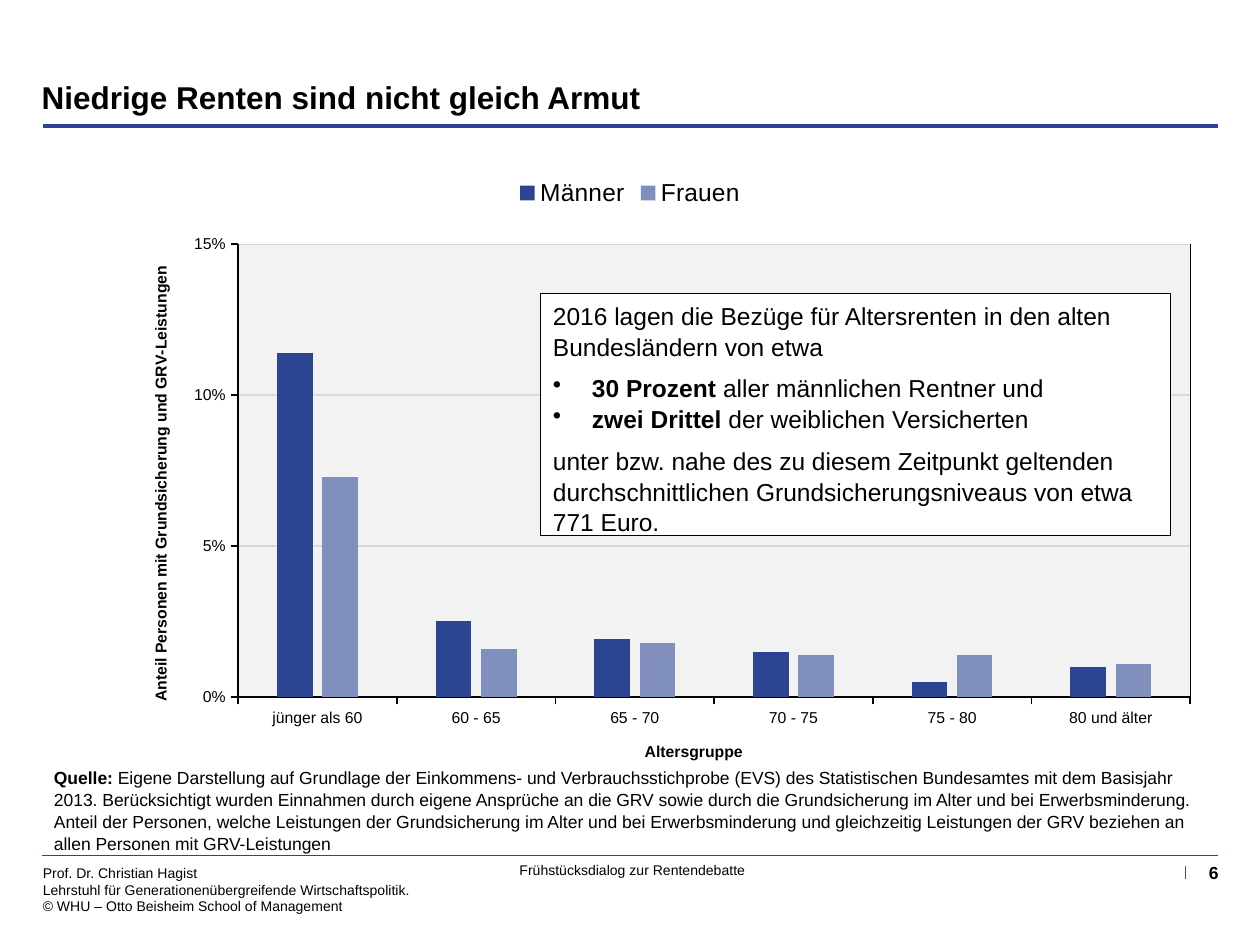
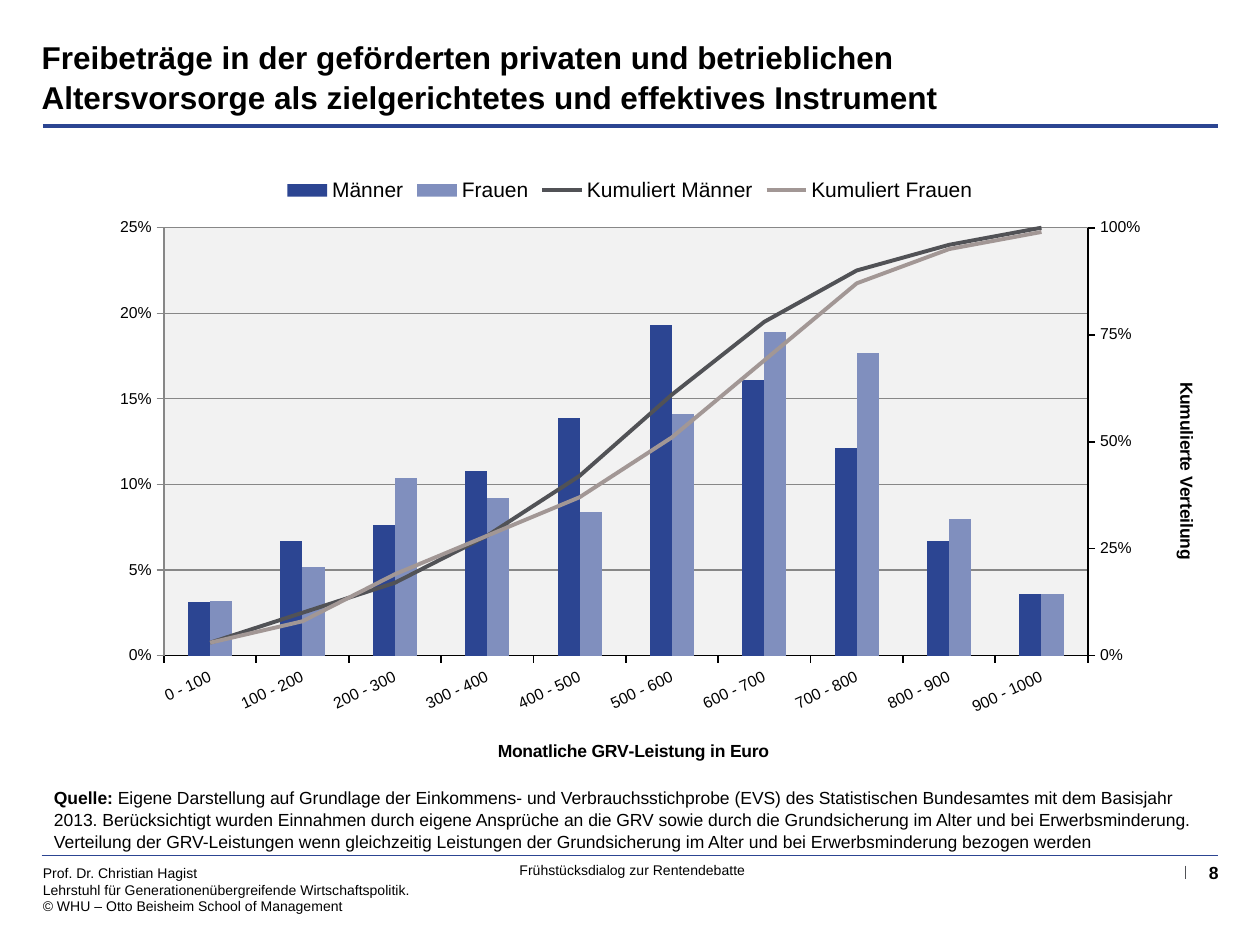
from copy import deepcopy

from pptx import Presentation
from pptx.chart.axis import ValueAxis
from pptx.chart.data import CategoryChartData
from pptx.dml.color import RGBColor
from pptx.enum.chart import (XL_CHART_TYPE, XL_LEGEND_POSITION, XL_MARKER_STYLE,
                             XL_TICK_MARK)
from pptx.enum.shapes import MSO_CONNECTOR, MSO_SHAPE
from pptx.enum.text import MSO_ANCHOR, PP_ALIGN
from pptx.oxml import parse_xml
from pptx.oxml.ns import nsdecls, qn
from pptx.util import Inches, Pt

COLUMN = XL_CHART_TYPE.COLUMN_CLUSTERED
TOP = XL_LEGEND_POSITION.TOP
NO_MARK = XL_MARKER_STYLE.NONE
NONE, OUT = XL_TICK_MARK.NONE, XL_TICK_MARK.OUTSIDE
RECT, STRAIGHT = MSO_SHAPE.RECTANGLE, MSO_CONNECTOR.STRAIGHT
HIGH, LOW = MSO_ANCHOR.TOP, MSO_ANCHOR.BOTTOM
LEFT, MID, RIGHT = PP_ALIGN.LEFT, PP_ALIGN.CENTER, PP_ALIGN.RIGHT

# Grid: 100 columns by 75 rows
COLS, ROWS = 100, 75
UNIT = Inches(0.1)
EDGE, SPAN = 3.3, 93.4
FONT = "Arial"
BLACK, WHITE, BLUE, PALE = "000000", "FFFFFF", "2C4592", "808FBE"
DARK, TAUPE, GRID, PLOT = "515256", "A29795", "D9D9D9", "F2F2F2"

SOURCE = ("Quelle:| Eigene Darstellung auf Grundlage der Einkommens- und "
          "Verbrauchsstichprobe (EVS) des Statistischen Bundesamtes mit dem "
          "Basisjahr 2013. Berücksichtigt wurden Einnahmen durch eigene "
          "Ansprüche an die GRV sowie durch die Grundsicherung im Alter und "
          "bei Erwerbsminderung. ")
AUTHOR = ["Prof. Dr. Christian Hagist",
          "Lehrstuhl für Generationenübergreifende Wirtschaftspolitik.",
          "© WHU – Otto Beisheim School of Management"]


def rgb(code):
    return RGBColor.from_string(code)


def units(*sizes):
    return [round(size * UNIT) for size in sizes]


def style(font, size, bold=False):
    font.name, font.size, font.bold = FONT, Pt(size), bold
    font.color.rgb = rgb(BLACK)


def ink(line, color, width):
    line.color.rgb, line.width = rgb(color), Pt(width)


def paint(fill, color):
    fill.solid()
    fill.fore_color.rgb = rgb(color)


def fill_xml(color):
    return parse_xml(f'<c:spPr {nsdecls("c", "a")}><a:solidFill>'
                     f'<a:srgbClr val="{color}"/></a:solidFill>'
                     '<a:ln><a:noFill/></a:ln></c:spPr>')


def layout(x, y, w=None, h=None):
    """Manual place in a chart, in shares of its size."""
    inner = '<c:layoutTarget val="inner"/>' if w else ""
    pairs = [("xMode", "edge"), ("yMode", "edge"), ("x", x), ("y", y)]
    if w:
        pairs += [("w", w), ("h", h)]
    tags = "".join(f'<c:{key} val="{val}"/>' for key, val in pairs)
    return parse_xml(f'<c:layout {nsdecls("c")}><c:manualLayout>{inner}{tags}'
                     '</c:manualLayout></c:layout>')


class Deck:
    def __init__(self):
        self.prs = Presentation()
        self.prs.slide_width, self.prs.slide_height = units(COLS, ROWS)
        self.slide = None

    # Page frame: rules, footer, number and title
    def page(self, title, number):
        self.slide = self.prs.slides.add_slide(self.prs.slide_layouts[6])
        self.text((2.6, 67.8, 36, 5.6), AUTHOR, 8, pad=0.8)
        self.text((36.4, 67.7, 27.6, 2.8), ["Frühstücksdialog zur Rentendebatte"],
                  8, pad=0.8, align=MID)
        self.line(EDGE, 67.9, EDGE + SPAN, 67.9, BLUE, 0.75)
        self.line(EDGE + 0.1, 10, EDGE + SPAN, 10, BLUE, 2.25)
        self.text((88.6, 67.6, 8.9, 2.9), [f"{number}|"], 10, pad=0.8, align=RIGHT)
        self.line(94.1, 68.7, 94.1, 69.8, DARK, 0.75)
        self.text((EDGE, 2.4, 75.9, 6.8), [f"{title}|"], 18, pad=0,
                  anchor=LOW, lead=1.05)

    def line(self, x1, y1, x2, y2, color, width):
        rule = self.slide.shapes.add_connector(STRAIGHT, *units(x1, y1, x2, y2))
        ink(rule.line, color, width)
        rule._element.spPr.append(parse_xml(f'<a:effectLst {nsdecls("a")}/>'))

    def text(self, place, lines, size, **look):
        box = self.slide.shapes.add_textbox(*units(*place))
        self.pour(box.text_frame, lines, size, **look)

    def panel(self, place, lines, size, **look):
        box = self.slide.shapes.add_shape(RECT, *units(*place))
        box.shadow.inherit = False
        paint(box.fill, WHITE)
        ink(box.line, BLACK, 0.75)
        self.pour(box.text_frame, lines, size, **look)

    def pour(self, frame, lines, size, pad=None, align=LEFT, anchor=HIGH,
             lead=None, gaps=(), dots=()):
        """Fill a frame; words before a bar are bold."""
        frame.word_wrap, frame.vertical_anchor = True, anchor
        if pad is not None:
            frame.margin_left = frame.margin_right = units(pad)[0]
            frame.margin_top = frame.margin_bottom = units(pad)[0]
        for num, words in enumerate(lines):
            para = frame.add_paragraph() if num else frame.paragraphs[0]
            para.alignment = align
            if lead:
                para.line_spacing = lead
            if num in gaps:
                para.space_after = Pt(6)
            if num in dots:
                self.dot(para)
            bold, bar, rest = words.partition("|")
            for part, strong in ((bold, bool(bar)), (rest, False)):
                if part:
                    run = para.add_run()
                    run.text = part
                    style(run.font, size, strong)

    def dot(self, para):
        props = para._p.get_or_add_pPr()
        indent = Inches(0.31)
        props.set("marL", str(indent))
        props.set("indent", str(-indent))
        props.append(parse_xml(f'<a:buChar {nsdecls("a")} char="•"/>'))

    def chart(self, place, cats, rows, plot, keys):
        """Column chart; rows hold name, values and colour."""
        data = CategoryChartData(number_format="0%")
        data.categories = cats
        for name, vals, _ in rows:
            data.add_series(name, vals)
        chart = self.slide.shapes.add_chart(COLUMN, *units(*place), data).chart
        style(chart.font, 9)
        chart.has_title = False
        chart.has_legend = True
        chart.legend.position = TOP
        chart.legend.include_in_layout = False
        style(chart.legend.font, keys)
        bars = chart.plots[0]
        bars.vary_by_categories, bars.gap_width = False, 219
        for row, (_, _, color) in zip(bars.series, rows):
            paint(row.format.fill, color)
        # Plot area
        space = chart._chartSpace
        space.chart.addnext(fill_xml(WHITE))
        area = space.chart.plotArea
        for old in area.findall(qn("c:layout")):
            area.remove(old)
        area.insert(0, layout(*plot))
        area.append(fill_xml(PLOT))
        return chart

    def axis(self, axis, title, size, spot, turn=0, top=None, step=None):
        axis.major_tick_mark, axis.minor_tick_mark = OUT, NONE
        ink(axis.format.line, BLACK, 1)
        style(axis.tick_labels.font, 9)
        if top:
            axis.minimum_scale, axis.maximum_scale = 0, top
            axis.major_unit = step
            axis.tick_labels.number_format = "0%"
            axis.tick_labels.number_format_is_linked = False
        frame = axis.axis_title.text_frame
        frame.text = title
        style(frame.paragraphs[0].runs[0].font, size, True)
        body = frame._txBody.bodyPr
        body.set("rot", str(turn * 60000))
        body.set("vert", "horz")
        head = axis._element.find(qn("c:title"))
        head.replace(head.find(qn("c:layout")), layout(*spot))

    def grid(self, axis):
        axis.has_major_gridlines = True
        ink(axis.major_gridlines.format.line, GRID, 0.75)

    def lines(self, chart, first, colors):
        """Turn series from first on into lines on a right axis."""
        area = chart._chartSpace.chart.plotArea
        bars = area.find(qn("c:barChart"))
        combo = parse_xml(
            f'<c:lineChart {nsdecls("c")}><c:grouping val="standard"/>'
            '<c:varyColors val="0"/><c:marker val="1"/>'
            '<c:axId val="501"/><c:axId val="502"/></c:lineChart>')
        mark = combo.find(qn("c:marker"))
        for row in bars.findall(qn("c:ser"))[first:]:
            for tag in ("c:invertIfNegative", "c:spPr"):
                for old in row.findall(qn(tag)):
                    row.remove(old)
            mark.addprevious(row)
        bars.addnext(combo)
        for row, color in zip(chart.plots[1].series, colors):
            ink(row.format.line, color, 2.25)
            row.marker.style, row.smooth = NO_MARK, False
        # Second pair of axes
        cat, val = area.find(qn("c:catAx")), area.find(qn("c:valAx"))
        twins = deepcopy(val), deepcopy(cat)
        for twin, own, other in zip(twins, ("502", "501"), ("501", "502")):
            twin.find(qn("c:axId")).set("val", own)
            twin.find(qn("c:crossAx")).set("val", other)
        right, base = twins
        val.addnext(right)
        right.addnext(base)
        right.find(qn("c:axPos")).set("val", "r")
        right.find(qn("c:crosses")).set("val", "max")
        base.find(qn("c:delete")).set("val", "1")
        side = ValueAxis(right)
        side.has_major_gridlines = False
        return side


def low_pensions(deck):
    deck.page("Niedrige Renten sind nicht gleich Armut", 6)
    chart = deck.chart(
        (EDGE, 13.1, SPAN, 52.9),
        ["jünger als 60", "60 - 65", "65 - 70", "70 - 75", "75 - 80", "80 und älter"],
        [("Männer", [0.114, 0.025, 0.019, 0.015, 0.005, 0.01], BLUE),
         ("Frauen", [0.073, 0.016, 0.018, 0.014, 0.014, 0.011], PALE)],
        (0.167, 0.119, 0.809, 0.679), 14)
    chart.plots[0].overlap = -27
    deck.axis(chart.category_axis, "Altersgruppe", 9, (0.51, 0.86))
    deck.axis(chart.value_axis,
              "Anteil Personen mit Grundsicherung und GRV-Leistungen",
              9, (0.09, 0.147), -90, 0.15, 0.05)
    deck.grid(chart.value_axis)
    deck.line(94.5, 19.4, 94.5, 55.3, BLACK, 0.75)
    deck.text((EDGE, 60.3, SPAN, 7.7), [
        SOURCE + "Anteil der Personen, welche Leistungen der Grundsicherung im "
        "Alter und bei Erwerbsminderung und gleichzeitig Leistungen der GRV "
        "beziehen an allen Personen mit GRV-Leistungen"], 10, lead=1.05)
    deck.panel((42.9, 23.3, 50, 19.2), [
        "2016 lagen die Bezüge für Altersrenten in den alten Bundesländern von etwa",
        "30 Prozent |aller männlichen Rentner und",
        "zwei Drittel |der weiblichen Versicherten",
        "unter bzw. nahe des zu diesem Zeitpunkt geltenden durchschnittlichen "
        "Grundsicherungsniveaus von etwa 771 Euro."],
        14, lead=1.05, gaps=(0, 2), dots=(1, 2))


def allowances(deck):
    deck.page("Freibeträge in der geförderten privaten und betrieblichen "
              "Altersvorsorge als zielgerichtetes und effektives Instrument", 8)
    chart = deck.chart(
        (EDGE, 13.1, SPAN, 48.8),
        [f"{low} - {low + 100}" for low in range(0, 1000, 100)],
        [("Männer", [0.031, 0.067, 0.076, 0.108, 0.139, 0.193, 0.161, 0.121,
                     0.067, 0.036], BLUE),
         ("Frauen", [0.032, 0.052, 0.104, 0.092, 0.084, 0.141, 0.189, 0.177,
                     0.08, 0.036], PALE),
         ("Kumuliert Männer", [0.03, 0.1, 0.17, 0.28, 0.42, 0.61, 0.78, 0.9,
                               0.96, 1], DARK),
         ("Kumuliert Frauen", [0.03, 0.08, 0.19, 0.28, 0.37, 0.51, 0.69, 0.87,
                               0.95, 0.99], TAUPE)],
        (0.104, 0.102, 0.785, 0.696), 12)
    chart.plots[0].overlap = 0
    side = deck.lines(chart, 2, (DARK, TAUPE))
    deck.axis(chart.category_axis, "Monatliche GRV-Leistung in Euro", 10, (0.385, 0.93))
    deck.axis(chart.value_axis, "Anteil der Rentenklasse", 10, (0.025, 0.335),
              -90, 0.2, 0.05)
    deck.axis(side, "Kumulierte Verteilung", 10, (0.96, 0.348), 90, 1, 0.25)
    deck.grid(chart.value_axis)
    slant = chart.category_axis._element.find(qn("c:txPr")).find(qn("a:bodyPr"))
    slant.set("rot", str(-25 * 60000))
    deck.text((EDGE, 61.9, SPAN, 6.1), [
        SOURCE + "Verteilung der GRV-Leistungen wenn gleichzeitig Leistungen der "
        "Grundsicherung im Alter und bei Erwerbsminderung bezogen werden"],
        10, lead=1.05)


def main():
    deck = Deck()
    low_pensions(deck)
    allowances(deck)
    deck.prs.save("out.pptx")


if __name__ == "__main__":
    main()
